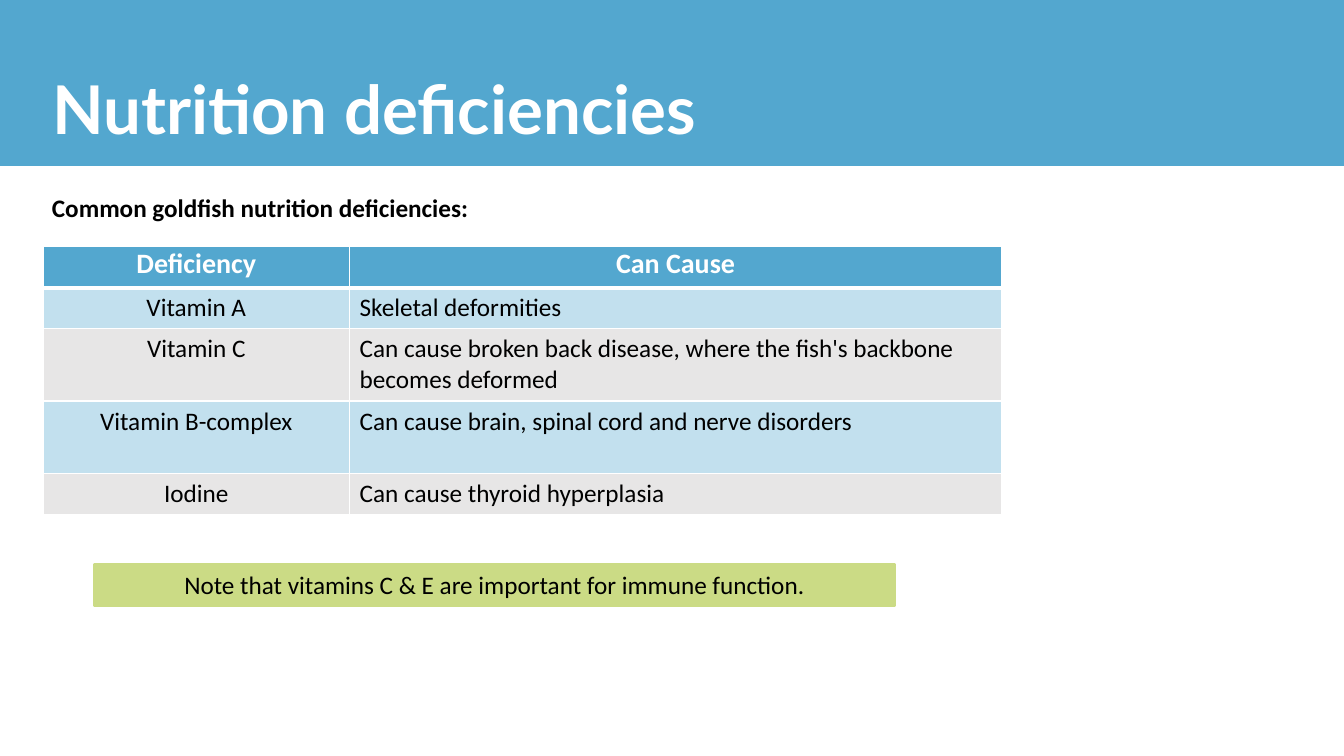
from dataclasses import dataclass

from lxml import etree
from pptx import Presentation
from pptx import util as u
from pptx.dml.color import RGBColor
from pptx.enum import shapes, text
from pptx.oxml.ns import qn

PX = 9525
WHITE = RGBColor(0xFF, 0xFF, 0xFF)
BLACK = RGBColor(0x00, 0x00, 0x00)
BLUE = RGBColor(0x53, 0xA7, 0xCF)
GREY = RGBColor(0xE7, 0xE6, 0xE6)
GREEN = RGBColor(0xCB, 0xDB, 0x85)
CENTER = text.PP_ALIGN.CENTER
LEFT = text.PP_ALIGN.LEFT


@dataclass(frozen=True)
class Box:
    left: int
    top: int
    width: int
    height: int

    def emu(self) -> tuple[int, int, int, int]:
        return self.left * PX, self.top * PX, self.width * PX, self.height * PX


@dataclass(frozen=True)
class Style:
    size: int
    color: RGBColor = BLACK
    bold: bool = False
    font: str = "Calibri"
    align: text.PP_ALIGN = LEFT


@dataclass(frozen=True)
class Deficiency:
    name: str
    effect: str
    height: int


TITLE = Style(48, WHITE, True, "Lato")
INTRO = Style(18, bold=True)
HEADER = Style(20, WHITE, True, align=CENTER)
NAME = Style(18, align=CENTER)
EFFECT = Style(18)

COLUMN_WIDTHS = (292, 621)
ROWS = (
    Deficiency("Deficiency", "Can Cause", 39),
    Deficiency("Vitamin A", "Skeletal deformities", 38),
    Deficiency("Vitamin C", "Can cause broken back disease, where the fish's backbone becomes deformed", 69),
    Deficiency("Vitamin B-complex", "Can cause brain, spinal cord and nerve disorders", 69),
    Deficiency("Iodine", "Can cause thyroid hyperplasia", 38),
)


def write(frame, wording: str, style: Style) -> None:
    frame.text = wording
    paragraph = frame.paragraphs[0]
    paragraph.alignment = style.align
    font = paragraph.runs[0].font
    font.size = u.Pt(style.size)
    font.bold = style.bold
    font.name = style.font
    font.color.rgb = style.color


def add_rectangle(slide, box: Box, color: RGBColor):
    shape = slide.shapes.add_shape(shapes.MSO_SHAPE.RECTANGLE, *box.emu())
    shape.shadow.inherit = False
    shape.fill.solid()
    shape.fill.fore_color.rgb = color
    shape.line.fill.background()
    return shape


def add_title(slide, wording: str) -> None:
    band = add_rectangle(slide, Box(0, 0, 1280, 158), BLUE)
    title = slide.shapes.title
    title.element.addprevious(band.element)
    title.left, title.top, title.width, title.height = Box(40, 38, 1151, 139).emu()
    write(title.text_frame, wording, TITLE)
    title.text_frame.vertical_anchor = text.MSO_ANCHOR.MIDDLE
    title.text_frame.paragraphs[0].line_spacing = 0.9


def add_intro(slide, wording: str) -> None:
    intro = slide.shapes.add_textbox(*Box(40, 178, 700, 38).emu())
    intro.text_frame.word_wrap = True
    write(intro.text_frame, wording, INTRO)


def add_note(slide, wording: str) -> None:
    note = add_rectangle(slide, Box(90, 538, 762, 38), GREEN)
    note.line.color.rgb = GREEN
    note.line.width = u.Pt(2.5)
    note.text_frame.word_wrap = True
    write(note.text_frame, wording, NAME)


def fill_cell(cell, color: RGBColor, opacity: int = 100) -> None:
    cell.fill.solid()
    cell.fill.fore_color.rgb = color
    if opacity < 100:
        color_element = next(cell._tc.tcPr.iter(qn("a:srgbClr")))
        etree.SubElement(color_element, qn("a:alpha"), val=str(opacity * 1000))


def set_borders(cell, top: int, bottom: int) -> None:
    widths = {"a:lnL": 1, "a:lnR": 1, "a:lnT": top, "a:lnB": bottom}
    for position, (tag, width) in enumerate(widths.items()):
        line = etree.Element(qn(tag), w=str(u.Pt(width)))
        solid = etree.SubElement(line, qn("a:solidFill"))
        etree.SubElement(solid, qn("a:srgbClr"), val=str(WHITE))
        cell._tc.tcPr.insert(position, line)


def add_deficiency_table(slide) -> None:
    box = Box(41, 235, sum(COLUMN_WIDTHS), sum(row.height for row in ROWS))
    table = slide.shapes.add_table(len(ROWS), len(COLUMN_WIDTHS), *box.emu()).table
    for column, width in zip(table.columns, COLUMN_WIDTHS):
        column.width = width * PX
    for index, row in enumerate(ROWS):
        table.rows[index].height = row.height * PX
        is_header = index == 0
        styles = (HEADER, HEADER) if is_header else (NAME, EFFECT)
        for column, (wording, style) in enumerate(zip((row.name, row.effect), styles)):
            cell = table.cell(index, column)
            write(cell.text_frame, wording, style)
            if is_header:
                cell.margin_left = cell.margin_right = 7 * PX
                cell.margin_top = cell.margin_bottom = 0
                fill_cell(cell, BLUE)
            elif index % 2:
                fill_cell(cell, BLUE, 35)
            else:
                fill_cell(cell, GREY)
            set_borders(cell, 3 if index == 1 else 1, 3 if is_header else 1)


def main() -> None:
    presentation = Presentation()
    presentation.slide_width = 1280 * PX
    presentation.slide_height = 720 * PX
    slide = presentation.slides.add_slide(presentation.slide_layouts[5])
    add_title(slide, "Nutrition deficiencies")
    add_deficiency_table(slide)
    add_note(slide, "Note that vitamins C & E are important for immune function.")
    add_intro(slide, "Common goldfish nutrition deficiencies:")
    presentation.save("out.pptx")


if __name__ == "__main__":
    main()
